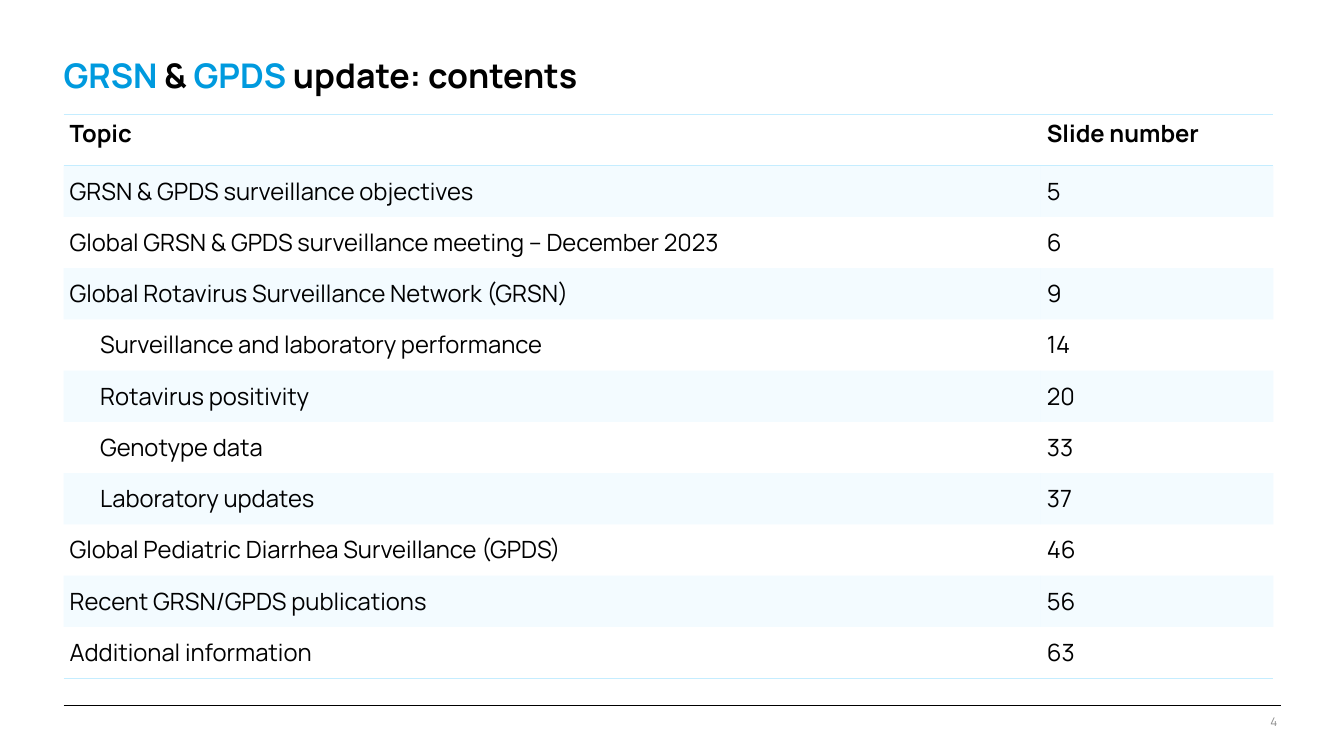
import pptx
import pptx.dml.color
import pptx.enum.shapes
import pptx.enum.text
import pptx.oxml
import pptx.oxml.ns
import pptx.util
from lxml import etree

Cm = pptx.util.Cm
Pt = pptx.util.Pt
RGBColor = pptx.dml.color.RGBColor
Anchor = pptx.enum.text.MSO_ANCHOR
Align = pptx.enum.text.PP_ALIGN
qn = pptx.oxml.ns.qn

# Content
TITLE = [("GRSN", True), (" & ", False), ("GPDS", True), (" update: contents", False)]
HEADER = ("Topic", "Slide number")
TOPICS = [  # topic, slide number, indent level
    ("GRSN & GPDS surveillance objectives", "5", 0),
    ("Global GRSN & GPDS surveillance meeting – December 2023", "6", 0),
    ("Global Rotavirus Surveillance Network (GRSN)", "9", 0),
    ("Surveillance and laboratory performance", "14", 1),
    ("Rotavirus positivity", "20", 1),
    ("Genotype data", "33", 1),
    ("Laboratory updates", "37", 1),
    ("Global Pediatric Diarrhea Surveillance (GPDS)", "46", 0),
    ("Recent GRSN/GPDS publications", "56", 0),
    ("Additional information", "63", 0),
]
PAGE_NUMBER = "4"

# Style
FONT = "Manrope"
BLUE = RGBColor(0x00, 0x9A, 0xDE)
PALE_BLUE = RGBColor(0xC5, 0xED, 0xFF)
BLACK = RGBColor(0, 0, 0)
GREY = RGBColor(0x8C, 0x8C, 0x8C)
NO_GRID_STYLE = "{2D5ABB26-0587-4C30-8999-92F81FD0307C}"

# Layout
LEFT = Cm(2.64)
TABLE_TOP = Cm(4.75)
COLUMN_WIDTHS = (Cm(40.61), Cm(9.66))
ROW_HEIGHT = Cm(2.13)
FOOTER_TOP = Cm(29.31)
FOOTER_RIGHT = Cm(53.23)


def format_font(font, size, color, bold=False):
    font.name = FONT
    font.size = Pt(size)
    font.bold = bold
    font.color.rgb = color


def clear_margins(text_frame):
    text_frame.margin_left = text_frame.margin_right = 0
    text_frame.margin_top = text_frame.margin_bottom = 0


def add_border(cell, side):
    line = etree.SubElement(cell._tc.get_or_add_tcPr(), qn(f"a:{side}"), w=str(Pt(1)))
    fill = etree.SubElement(line, qn("a:solidFill"))
    etree.SubElement(fill, qn("a:srgbClr"), val=str(PALE_BLUE))


def fill_band(cell):
    cell.fill.solid()
    cell.fill.fore_color.rgb = PALE_BLUE
    color = cell._tc.tcPr.find(f".//{qn('a:srgbClr')}")
    etree.SubElement(color, qn("a:alpha"), val="20000")


presentation = pptx.Presentation()
presentation.slide_width = Cm(55.85)
presentation.slide_height = Cm(31.42)
slide = presentation.slides.add_slide(presentation.slide_layouts[5])

# Footer rule
rule = slide.shapes.add_connector(
    pptx.enum.shapes.MSO_CONNECTOR.STRAIGHT, LEFT, FOOTER_TOP, FOOTER_RIGHT, FOOTER_TOP)
rule.line.color.rgb = BLACK
rule.line.width = Pt(0.75)
etree.SubElement(rule._element.spPr, qn("a:effectLst"))

# Title
title = slide.shapes.title
title.left, title.top, title.width, title.height = LEFT, Cm(2.46), Cm(51.7), Cm(1.7)
clear_margins(title.text_frame)
title.text_frame.vertical_anchor = Anchor.TOP
paragraph = title.text_frame.paragraphs[0]
paragraph.alignment = Align.LEFT
paragraph.line_spacing = 0.9
for text, highlighted in TITLE:
    run = paragraph.add_run()
    run.text = text
    format_font(run.font, 40, BLUE if highlighted else BLACK, bold=True)

# Contents table
rows = [(*HEADER, 0)] + TOPICS
last = len(rows) - 1
table = slide.shapes.add_table(
    len(rows), len(HEADER), LEFT, TABLE_TOP, sum(COLUMN_WIDTHS), ROW_HEIGHT * len(rows)).table
table._tbl.tblPr.find(qn("a:tableStyleId")).text = NO_GRID_STYLE
for column, width in zip(table.columns, COLUMN_WIDTHS):
    column.width = width
for index, (topic, number, level) in enumerate(rows):
    table.rows[index].height = ROW_HEIGHT
    for column, text in enumerate((topic, number)):
        cell = table.cell(index, column)
        cell.text_frame.text = text
        cell.vertical_anchor = Anchor.MIDDLE if index else Anchor.TOP
        paragraph = cell.text_frame.paragraphs[0]
        if level and column == 0:
            paragraph.level = level
            paragraph._p.get_or_add_pPr().set("marL", str(Cm(1.27)))
        format_font(paragraph.runs[0].font, 28, BLACK, bold=index == 0)
        if index == 0:
            add_border(cell, "lnT")
        if index in (0, last):
            add_border(cell, "lnB")
        if index % 2:
            fill_band(cell)
        else:
            cell.fill.background()

# Page number
page_width = Cm(4.11)
page_box = slide.shapes.add_textbox(Cm(53.08) - page_width, Cm(29.69), page_width, Cm(0.61))
clear_margins(page_box.text_frame)
page_box.text_frame.word_wrap = True
page_box.text_frame.text = PAGE_NUMBER
paragraph = page_box.text_frame.paragraphs[0]
paragraph.alignment = Align.RIGHT
format_font(paragraph.runs[0].font, 14, GREY)

presentation.save("out.pptx")
